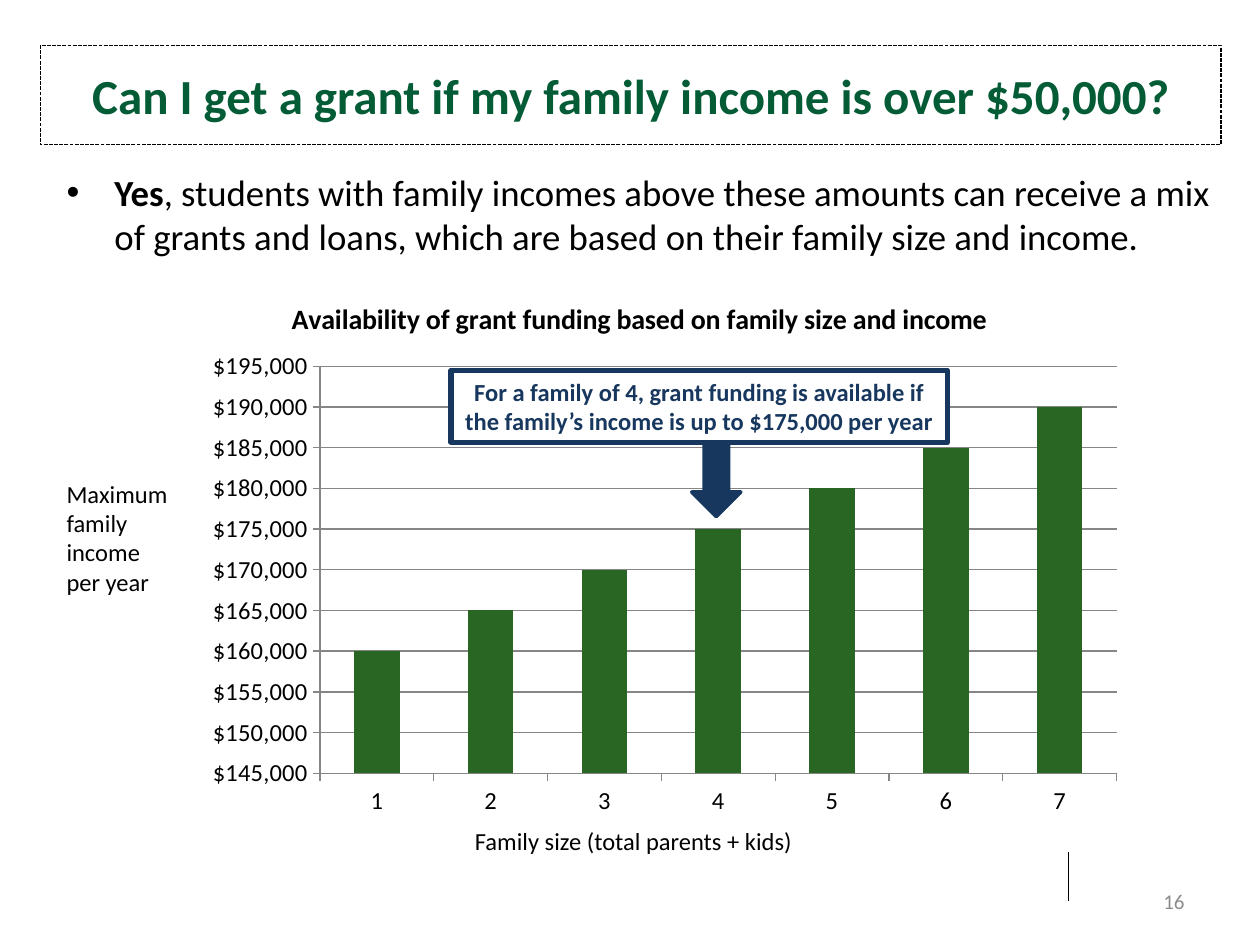
from dataclasses import dataclass
from typing import Any, Optional

from lxml.etree import SubElement
from pptx import Presentation
from pptx.chart.data import CategoryChartData as ChartData
from pptx.dml.color import RGBColor as Rgb
from pptx.enum.chart import XL_CHART_TYPE as Kind, XL_TICK_MARK as Tick
from pptx.enum.dml import MSO_LINE_DASH_STYLE as Dash
from pptx.enum.shapes import MSO_CONNECTOR as Link, MSO_SHAPE as Form
from pptx.enum.text import MSO_ANCHOR as Anchor, PP_ALIGN as Align
from pptx.oxml import parse_xml
from pptx.oxml.ns import nsdecls, qn
from pptx.util import Inches, Pt

HUES = {"ink": "000000", "title": "045C36", "bar": "296624",
        "navy": "17375E", "page": "8C8C8C", "grid": "868686", "white": "FFFFFF"}
FACE = "Calibri"


@dataclass
class Label:
    box: tuple
    runs: list  # pairs of text and bold
    size: float
    hue: str = "ink"
    align: Any = Align.LEFT
    anchor: Any = Anchor.TOP
    bullet: bool = False
    line: Optional[tuple] = None  # hue, width, dash
    fill: Optional[str] = None


LABELS = [
    Label((7.17, 6.95, 2.33, 0.4), [("16", False)], 12, "page", Align.RIGHT, Anchor.MIDDLE),
    Label((0.32, 0.36, 9.37, 0.79),
          [("Can I get a grant if my family income is over $50,000?", True)],
          28, "title", Align.CENTER, Anchor.MIDDLE, line=("ink", 0.75, Dash.SQUARE_DOT)),
    Label((0.43, 1.3, 9.29, 0.9),
          [("Yes", True), (", students with family incomes above these amounts can receive "
                           "a mix of grants and loans, which are based on their family size "
                           "and income.", False)], 21, bullet=True),
    Label((0.43, 3.75, 1.26, 1.04), [("Maximum family income\vper year", False)], 14),
    Label((3.67, 6.51, 2.91, 0.34), [("Family size (total parents + kids)", False)], 14),
]
NOTE = Label((3.58, 2.94, 3.94, 0.57),
             [("For a family of 4, grant funding is available if the family’s income "
               "is up to $175,000 per year", True)],
             14, "navy", Align.CENTER, line=("navy", 3, None), fill="white")


def rgb(hue: str) -> Rgb:
    return Rgb.from_string(HUES[hue])


def apply(item: Any, form: dict) -> None:
    for name, value in form.items():
        setattr(item, name, value)


def style(font: Any, size: float, hue: str = "ink", bold: bool = False) -> None:
    apply(font, {"name": FACE, "size": Pt(size), "bold": bold})
    font.color.rgb = rgb(hue)


def edge(line: Any, hue: str, width: float, dash: Any = None) -> None:
    line.color.rgb = rgb(hue)
    line.width = Pt(width)
    if dash:
        line.dash_style = dash


def put_label(slide: Any, label: Label) -> None:
    box = [Inches(n) for n in label.box]
    if label.line:
        shape = slide.shapes.add_shape(Form.RECTANGLE, *box)
        shape.shadow.inherit = False
        edge(shape.line, *label.line)
        if label.fill:
            shape.fill.solid()
            shape.fill.fore_color.rgb = rgb(label.fill)
        else:
            shape.fill.background()
    else:
        shape = slide.shapes.add_textbox(*box)
    frame = shape.text_frame
    apply(frame, {"word_wrap": True, "vertical_anchor": label.anchor})
    para = frame.paragraphs[0]
    para.alignment = label.align
    if label.bullet:
        props = para._p.get_or_add_pPr()
        apply_ind = {"marL": Inches(0.38), "indent": Inches(-0.38)}
        for name, value in apply_ind.items():
            props.set(name, str(int(value)))
        SubElement(props, qn("a:buFont"), typeface="Arial")
        SubElement(props, qn("a:buChar"), char="•")
        para.space_after = Pt(12)
    for text, bold in label.runs:
        for part, words in enumerate(text.split("\v")):
            if part:
                para.add_line_break()
            run = para.add_run()
            run.text = words
            style(run.font, label.size, label.hue, bold)


def put_chart(slide: Any) -> None:
    data = ChartData(number_format='"$"#,##0')
    data.categories = [str(n) for n in range(1, 8)]
    data.add_series("Series 1", range(160000, 195000, 5000))
    box = [Inches(n) for n in (1.28, 2.2, 7.59, 4.48)]
    chart = slide.shapes.add_chart(Kind.COLUMN_CLUSTERED, *box, data).chart
    style(chart.font, 18)
    chart.has_legend = False
    title = chart.chart_title.text_frame
    title.text = "Availability of grant funding based on family size and income"
    style(title.paragraphs[0].runs[0].font, 16, bold=True)

    cats, vals = chart.category_axis, chart.value_axis
    for axis in (cats, vals):
        apply(axis, {"major_tick_mark": Tick.OUTSIDE, "minor_tick_mark": Tick.NONE})
        style(axis.tick_labels.font, 14)
        edge(axis.format.line, "grid", 0.75)
    apply(vals, {"minimum_scale": 145000, "maximum_scale": 195000,
                 "major_unit": 5000, "has_major_gridlines": True})
    apply(vals.tick_labels, {"number_format": '"$"#,##0', "number_format_is_linked": False})
    edge(vals.major_gridlines.format.line, "grid", 0.75)

    plot = chart.plots[0]
    apply(plot, {"gap_width": 150, "vary_by_categories": False})
    fill = plot.series[0].format.fill
    fill.solid()
    fill.fore_color.rgb = rgb("bar")
    set_plot(chart, {"x": 0.166, "y": 0.158, "w": 0.833, "h": 0.721})


def set_plot(chart: Any, spots: dict) -> None:
    """Fix the inner plot area as fractions of the chart frame."""
    area = chart._chartSpace.chart.plotArea
    for old in area.findall(qn("c:layout")):
        area.remove(old)
    modes = "".join(f'<c:{n}Mode val="edge"/>' for n in "xy")
    sizes = "".join(f'<c:{n} val="{v}"/>' for n, v in spots.items())
    area.insert(0, parse_xml(
        f'<c:layout {nsdecls("c")}><c:manualLayout><c:layoutTarget val="inner"/>'
        f'{modes}{sizes}</c:manualLayout></c:layout>'))


def put_arrow(slide: Any) -> None:
    box = [Inches(n) for n in (5.38, 3.6, 0.61, 0.39)]
    arrow = slide.shapes.add_shape(Form.RIGHT_ARROW, *box)
    arrow.rotation = 90
    arrow.shadow.inherit = False
    arrow.fill.solid()
    arrow.fill.fore_color.rgb = rgb("navy")
    edge(arrow.line, "navy", 2)


def put_rule(slide: Any) -> None:
    ends = [Inches(n) for n in (8.48, 6.76, 8.48, 7.15)]
    rule = slide.shapes.add_connector(Link.STRAIGHT, *ends)
    edge(rule.line, "ink", 1)
    SubElement(rule._element.spPr, qn("a:effectLst"))


def main() -> None:
    deck = Presentation()
    apply(deck, {"slide_width": Inches(10), "slide_height": Inches(7.5)})
    slide = deck.slides.add_slide(deck.slide_layouts[6])
    put_rule(slide)
    for label in LABELS[:3]:
        put_label(slide, label)
    put_chart(slide)
    for label in LABELS[3:]:
        put_label(slide, label)
    put_arrow(slide)
    put_label(slide, NOTE)
    deck.save("out.pptx")


if __name__ == "__main__":
    main()
